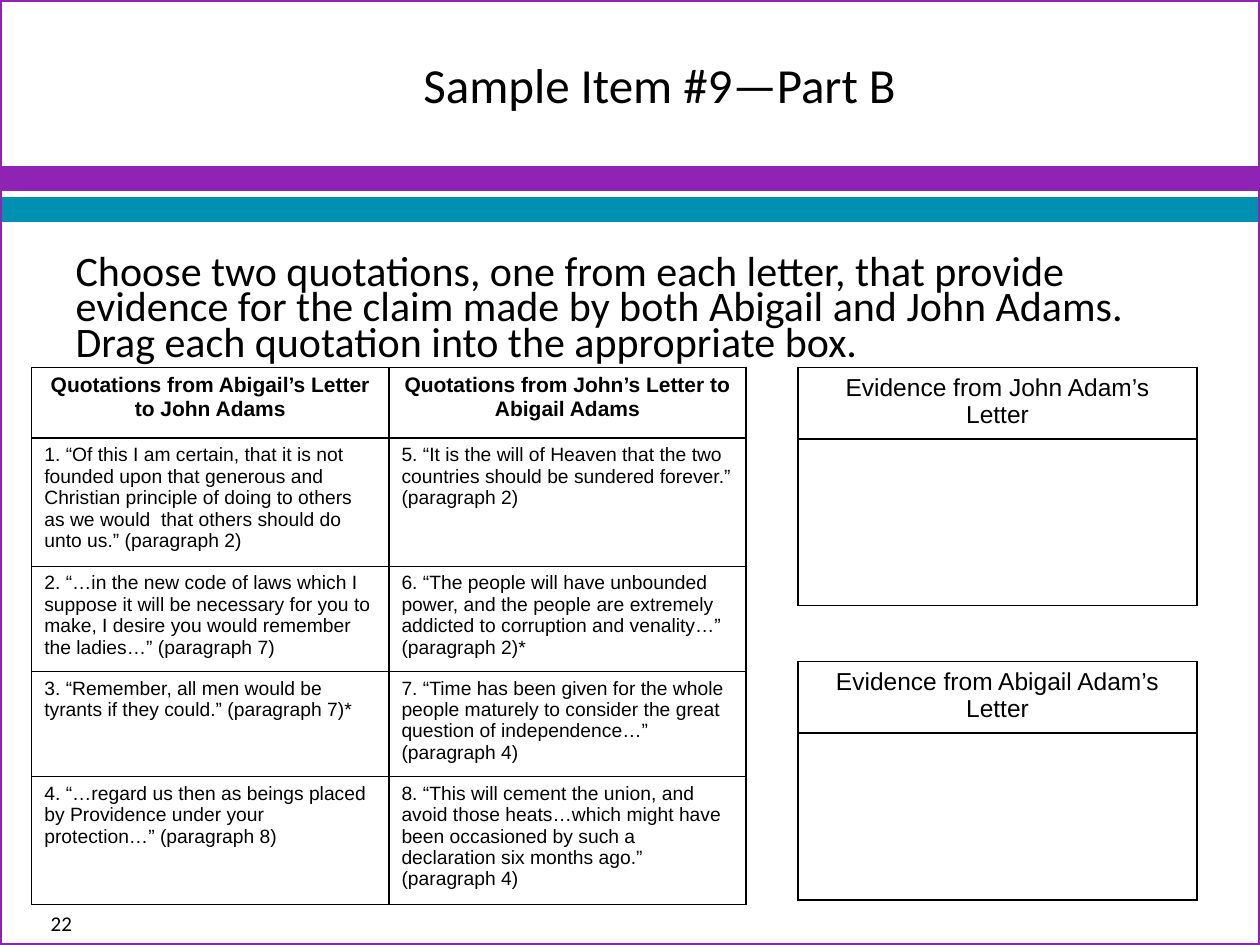
from dataclasses import dataclass
from typing import Optional

from pptx import Presentation
from pptx.dml.color import RGBColor
from pptx.enum.shapes import MSO_SHAPE as Shape
from pptx.enum.text import MSO_ANCHOR as Anchor, MSO_AUTO_SIZE as AutoSize, PP_ALIGN as Align
from pptx.oxml.ns import qn
from pptx.util import Cm, Pt
from lxml.etree import SubElement

COLORS = {"purple": "8F23B3", "teal": "0091B2", "black": "000000"}


@dataclass
class Box:
    left: float
    top: float
    width: float
    height: float

    def emu(self) -> list:
        return [Cm(v) for v in (self.left, self.top, self.width, self.height)]


@dataclass
class Band:
    box: Box
    color: str
    line: float
    filled: bool = True


@dataclass
class Grid:
    box: Box
    row_heights: list
    rows: list
    head: dict
    body: Optional[dict] = None


def rgb(name: str) -> RGBColor:
    return RGBColor.from_string(COLORS[name])


def write(tf, text: str, font: dict, align=Align.LEFT, **para):
    """Fill the first paragraph of a text frame."""
    p = tf.paragraphs[0]
    for key, value in {"alignment": align, "space_before": Pt(0), **para}.items():
        setattr(p, key, value)
    r = p.add_run()
    r.text = text
    for key, value in font.items():
        setattr(r.font, key, value)
    r.font.color.rgb = rgb("black")
    return p


def place(sp, box: Box) -> None:
    sp.left, sp.top, sp.width, sp.height = box.emu()


def set_indent(p, left: float, bullet: bool = True) -> None:
    pPr = p._p.get_or_add_pPr()
    pPr.set("marL", str(Cm(left)))
    pPr.set("indent", "0")
    if not bullet:
        SubElement(pPr, qn("a:buNone"))


def draw_band(s, band: Band) -> None:
    sp = s.shapes.add_shape(Shape.RECTANGLE, *band.box.emu())
    sp.shadow.inherit = False
    sp.line.color.rgb = rgb(band.color)
    sp.line.width = Pt(band.line)
    if band.filled:
        sp.fill.solid()
        sp.fill.fore_color.rgb = rgb(band.color)
    else:
        sp.fill.background()


def add_borders(cell) -> None:
    tcPr = cell._tc.get_or_add_tcPr()
    for side in ("lnL", "lnR", "lnT", "lnB"):
        ln = SubElement(tcPr, qn(f"a:{side}"), w=str(Pt(1)))
        fill = SubElement(ln, qn("a:solidFill"))
        SubElement(fill, qn("a:srgbClr"), val=COLORS["black"])


def draw_grid(s, grid: Grid) -> None:
    n_rows, n_cols = len(grid.rows), len(grid.rows[0])
    table = s.shapes.add_table(n_rows, n_cols, *grid.box.emu()).table
    table.first_row = table.horz_banding = False
    for i, (height, texts) in enumerate(zip(grid.row_heights, grid.rows)):
        table.rows[i].height = Cm(height)
        for j, text in enumerate(texts):
            cell = table.cell(i, j)
            add_borders(cell)
            cell.fill.background()
            if text and i == 0:
                write(cell.text_frame, text, grid.head, Align.CENTER)
            elif text:
                write(cell.text_frame, text, grid.body)


BANDS = [
    Band(Box(0, 3.38, 25.4, 0.43), "purple", 2),
    Band(Box(0, 4.01, 25.4, 0.43), "teal", 2),
    Band(Box(0, 0, 25.4, 19.05), "purple", 2.25, filled=False),
]

QUOTES = [
    ("Quotations from Abigail’s Letter to John Adams",
     "Quotations from John’s Letter to Abigail Adams"),
    ("1. “Of this I am certain, that it is not founded upon that generous and Christian "
     "principle of doing to others as we would  that others should do unto us.” (paragraph 2)",
     "5. “It is the will of Heaven that the two countries should be sundered forever.” "
     "(paragraph 2)"),
    ("2. “…in the new code of laws which I suppose it will be necessary for you to make, "
     "I desire you would remember the ladies…” (paragraph 7)",
     "6. “The people will have unbounded power, and the people are extremely addicted to "
     "corruption and venality…” (paragraph 2)*"),
    ("3. “Remember, all men would be tyrants if they could.” (paragraph 7)*",
     "7. “Time has been given for the whole people maturely to consider the great question "
     "of independence…” (paragraph 4)"),
    ("4. “…regard us then as beings placed by Providence under your protection…” (paragraph 8)",
     "8. “This will cement the union, and avoid those heats…which might have been occasioned "
     "by such a declaration six months ago.” (paragraph 4)"),
]

EVIDENCE_FONT = {"name": "Arial", "size": Pt(14), "bold": False}
GRIDS = [
    Grid(Box(0.64, 7.41, 14.4, 10.2), [1.42, 2.4, 1.98, 1.98, 2.4], QUOTES,
         {"name": "Arial", "size": Pt(12), "bold": True},
         {"name": "Arial", "size": Pt(11), "bold": False}),
] + [
    Grid(Box(16.09, top, 8.04, 4.38), [1.06, 3.36], [(f"Evidence from {name} Adam’s Letter",), ("",)],
         EVIDENCE_FONT)
    for top, name in ((7.41, "John"), (13.34, "Abigail"))
]


def main() -> None:
    prs = Presentation()
    prs.slide_width, prs.slide_height = Cm(25.4), Cm(19.05)
    s = prs.slides.add_slide(prs.slide_layouts[1])

    # Bars and frame
    for band in BANDS:
        draw_band(s, band)

    # Title
    title = s.shapes.title
    place(title, Box(7.82, 0, 17.58, 3.38))
    title.text_frame.vertical_anchor = Anchor.MIDDLE
    p = write(title.text_frame, "Sample Item #9—Part B", {"name": "Calibri", "size": Pt(28)})
    set_indent(p, 0.46)

    # Instructions
    body = s.placeholders[1]
    place(body, Box(1.27, 5.08, 22.86, 13.13))
    body.text_frame.auto_size = AutoSize.NONE
    p = write(body.text_frame,
              "Choose two quotations, one from each letter, that provide evidence for the claim "
              "made by both Abigail and John Adams. Drag each quotation into the appropriate box.",
              {"name": "Calibri", "size": Pt(24)}, line_spacing=0.7)
    set_indent(p, 0, bullet=False)

    # Page number
    number = s.shapes.add_textbox(*Box(0, 18.24, 1.7, 0.81).emu())
    number.text_frame.word_wrap = True
    write(number.text_frame, "22", {"name": "Calibri", "size": Pt(12)}, Align.RIGHT)

    # Quotation table and evidence boxes
    for grid in GRIDS:
        draw_grid(s, grid)

    prs.save("out.pptx")


if __name__ == "__main__":
    main()
